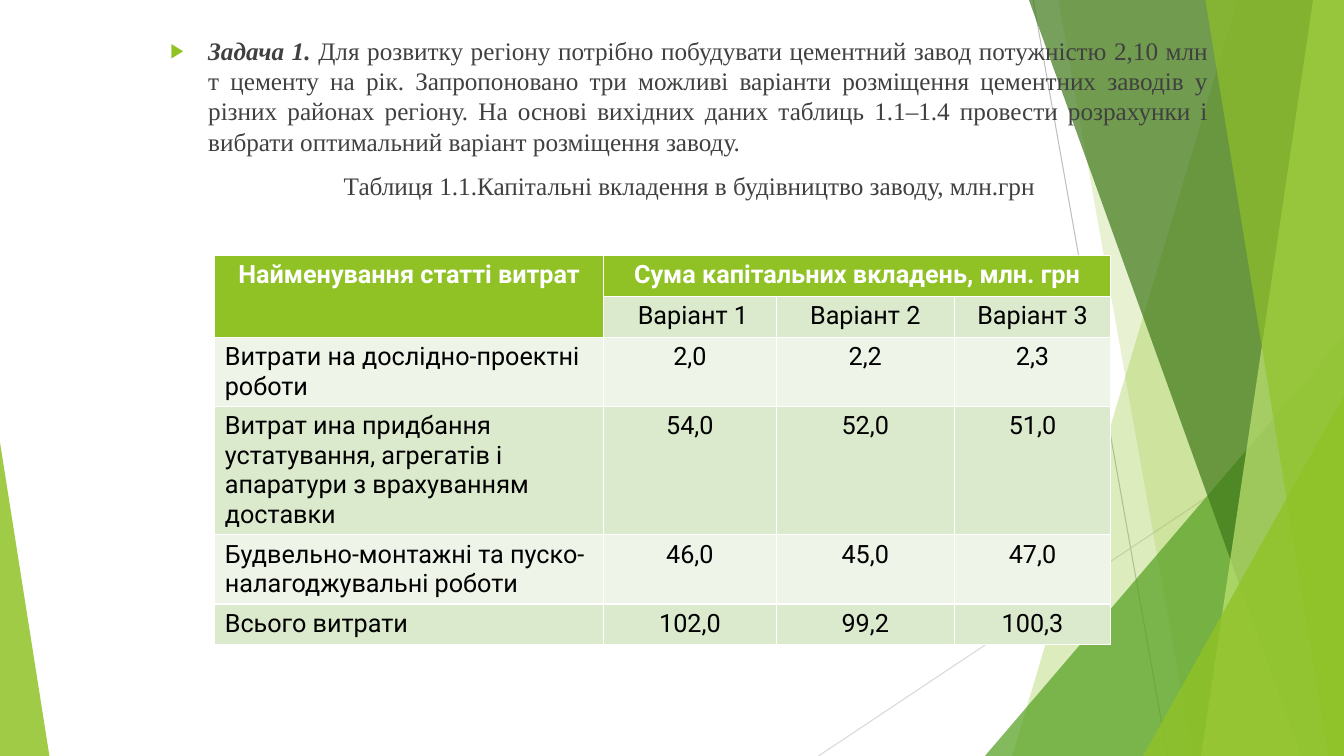
from lxml import etree
from pptx import Presentation
from pptx import util as u
from pptx.dml.color import RGBColor
from pptx.enum import shapes, text
from pptx.oxml import ns

WIDTH, HEIGHT = 960, 540
GREEN, DARK_GREEN, PALE_GREEN, MID_GREEN = "90C226", "3F7819", "C0E474", "54A021"


def write(para, words, font, color, bold=False, italic=False, align=text.PP_ALIGN.LEFT):
    para.alignment = align
    span = para.add_run()
    span.text = words
    span.font.name, span.font.size = font, u.Pt(18)
    span.font.bold, span.font.italic = bold, italic
    span.font.color.rgb = RGBColor.from_string(color)


def paint(shape, color, opacity):
    shape.shadow.inherit = False
    shape.line.fill.background()
    shape.fill.solid()
    shape.fill.fore_color.rgb = RGBColor.from_string(color)
    tint = shape.fill._xPr.find(".//" + ns.qn("a:srgbClr"))
    etree.SubElement(tint, ns.qn("a:alpha"), val=str(opacity * 1000))


deck = Presentation()
deck.slide_width, deck.slide_height = u.Pt(WIDTH), u.Pt(HEIGHT)
page = deck.slides.add_slide(deck.slide_layouts[1])
title, body = page.placeholders
title.element.getparent().remove(title.element)

# Thin background lines
for x1, y1, x2, y2, color in [(738, 0, 834, HEIGHT, "BFBFBF"),
                              (WIDTH, 290, 584.6, HEIGHT, "D9D9D9")]:
    line = page.shapes.add_connector(shapes.MSO_CONNECTOR.STRAIGHT,
                                     u.Pt(x1), u.Pt(y1), u.Pt(x2), u.Pt(y2))
    line.line.color.rgb = RGBColor.from_string(color)
    line.line.width = u.Pt(0.75)
    etree.SubElement(line.element.spPr, ns.qn("a:effectLst"))

# Green facets: bands reach the right edge, triangles stand on the bottom edge
facets = [
    ("band", 884, 723, GREEN, 30),
    ("band", 756, 852, GREEN, 20),
    ("triangle", 703.5, 240, MID_GREEN, 72),
    ("band", 735, 929.5, DARK_GREEN, 70),
    ("band", 938, 858, PALE_GREEN, 70),
    ("band", 861, 949, GREEN, 65),
    ("triangle", 816.5, 283, GREEN, 80),
    ("left triangle", 0, 316, GREEN, 85),
]
for kind, first, second, color, opacity in facets:
    if kind == "band":
        outline = page.shapes.build_freeform(u.Pt(first), 0)
        corners = [(WIDTH, 0), (WIDTH, HEIGHT), (second, HEIGHT)]
        outline.add_line_segments([(u.Pt(x), u.Pt(y)) for x, y in corners])
        facet = outline.convert_to_shape()
    else:
        on_left = kind == "left triangle"
        width = 35.3 if on_left else WIDTH - first
        facet = page.shapes.add_shape(shapes.MSO_SHAPE.ISOSCELES_TRIANGLE, u.Pt(first),
                                      u.Pt(second), u.Pt(width), u.Pt(HEIGHT - second))
        facet.adjustments[0] = 0 if on_left else 1
    paint(facet, color, opacity)

# Task text, in front of the facets
body.element.getparent().append(body.element)
body.left, body.top, body.width, body.height = u.Pt(114.5), u.Pt(21.6), u.Pt(756), u.Pt(409)
frame = body.text_frame
frame.auto_size = text.MSO_AUTO_SIZE.NONE
frame.vertical_anchor = text.MSO_ANCHOR.TOP
task, caption = frame.paragraphs[0], frame.add_paragraph()
serif = {"font": "Times New Roman", "color": "404040"}
write(task, "Задача 1. ", bold=True, italic=True, **serif)
write(task, "Для розвитку регіону потрібно побудувати цементний завод потужністю 2,10 млн т "
            "цементу на рік. Запропоновано три можливі варіанти розміщення цементних заводів "
            "у різних районах регіону. На основі вихідних даних таблиць 1.1–1.4 провести "
            "розрахунки і вибрати оптимальний варіант розміщення заводу. ",
      align=text.PP_ALIGN.JUSTIFY, **serif)
write(caption, "Таблиця 1.1.Капітальні вкладення в будівництво заводу, млн.грн",
      align=text.PP_ALIGN.CENTER, **serif)
for para, indent in [(task, 27), (caption, 0)]:
    para.space_before = u.Pt(10)
    props = para._p.get_or_add_pPr()
    props.set("marL", str(u.Pt(indent)))
    props.set("indent", str(u.Pt(-indent)))
    if indent:
        bullet_color = etree.SubElement(props, ns.qn("a:buClr"))
        etree.SubElement(bullet_color, ns.qn("a:srgbClr"), val=GREEN)
        etree.SubElement(props, ns.qn("a:buSzPct"), val="80000")
        etree.SubElement(props, ns.qn("a:buChar"), char="▶")
    else:
        etree.SubElement(props, ns.qn("a:buNone"))

# Cost table; the default table style supplies the white borders
costs = [
    ["Найменування статті витрат", "Сума капітальних вкладень, млн. грн", "", ""],
    ["", " Варіант 1", "Варіант 2", "Варіант 3"],
    ["Витрати на дослідно-проектні роботи", "2,0", "2,2", "2,3"],
    ["Витрат ина придбання устатування, агрегатів і апаратури з врахуванням доставки",
     "54,0", "52,0", "51,0"],
    ["Будвельно-монтажні та пуско-налагоджувальні роботи", "46,0", "45,0", "47,0"],
    ["Всього витрати", "102,0", "99,2", "100,3"],
]
widths = [277.7, 123.4, 127.2, 111.7]
heights = [29.2, 29.2, 49.4, 91.6, 49.4, 29.2]
table = page.shapes.add_table(len(costs), len(widths), u.Pt(153.4), u.Pt(182.4),
                              u.Pt(sum(widths)), u.Pt(sum(heights))).table
for column, width in zip(table.columns, widths):
    column.width = u.Pt(width)
for row, height in zip(table.rows, heights):
    row.height = u.Pt(height)
table.cell(0, 0).merge(table.cell(1, 0))
table.cell(0, 1).merge(table.cell(0, 3))

for r, values in enumerate(costs):
    for c, value in enumerate(values):
        cell = table.cell(r, c)
        header = r == 0 or (r == 1 and c == 0)
        fill = GREEN if header else "DBE9CD" if r % 2 else "EEF4E8"
        cell.fill.solid()
        cell.fill.fore_color.rgb = RGBColor.from_string(fill)
        if value:
            centred = header or c > 0
            write(cell.text_frame.paragraphs[0], value, "Roboto",
                  "FFFFFF" if header else "000000", bold=header,
                  align=text.PP_ALIGN.CENTER if centred else text.PP_ALIGN.LEFT)

deck.save("out.pptx")
